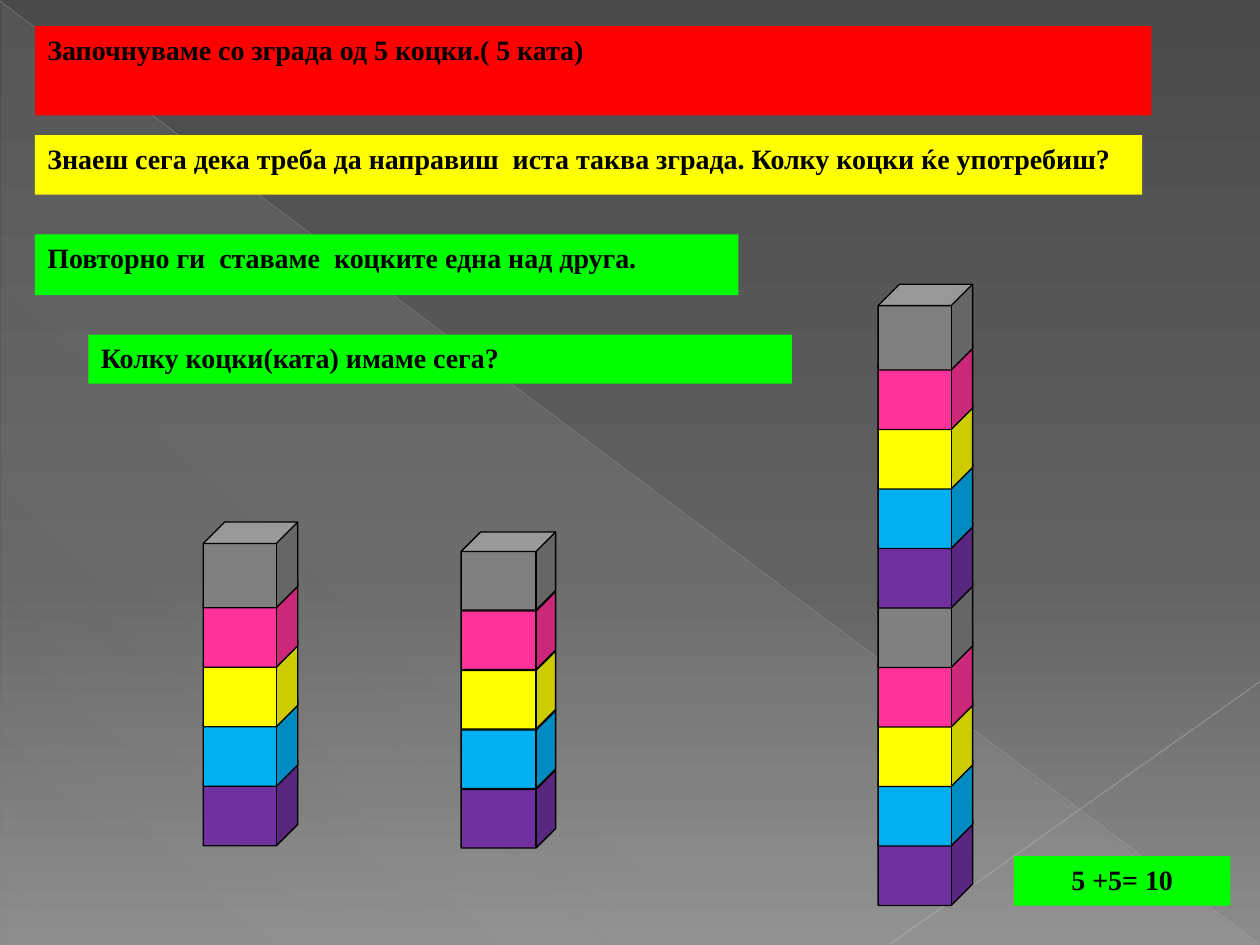
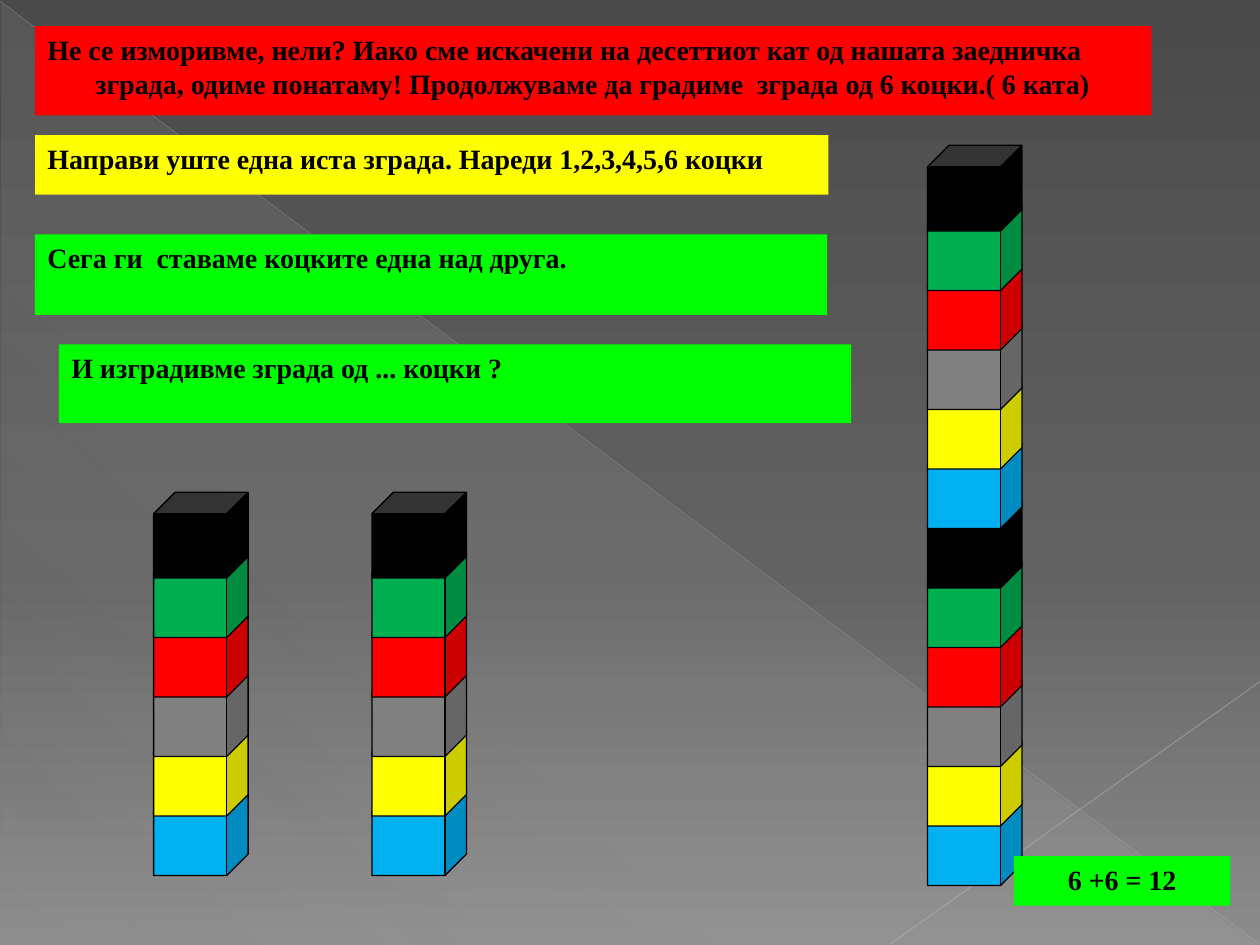
from lxml.etree import SubElement
from pptx import Presentation
from pptx.dml.color import RGBColor as RGB
from pptx.enum.shapes import MSO_CONNECTOR as CONN, MSO_SHAPE as SHAPE
from pptx.enum.text import MSO_ANCHOR as ANCHOR, PP_ALIGN as ALIGN
from pptx.oxml import parse_xml
from pptx.oxml.ns import nsdecls, qn
from pptx.util import Pt

W, H = 720, 540
FLOOR = 34
HANGING = 27.4
COLORS = {
    "black": "000000", "grey": "808080", "red": "FF0000", "green": "00B050",
    "lime": "00FF00", "yellow": "FFFF00", "blue": "00B0F0",
    "purple": "7030A0", "pink": "FF3399",
    "sky": "4A4A4A", "dusk": "626262", "ground": "8C8C8C",
    "haze": "D2D2D2", "long_ray": "BFBFBF", "short_ray": "C6C6C6",
}
FONT = {"name": "Times New Roman", "size": Pt(16), "bold": True}
FRAME = {"word_wrap": True, "vertical_anchor": ANCHOR.TOP}
BACKGROUND = [(0, "sky", 100), (60, "dusk", 100), (100, "ground", 100)]
HAZE = [(0, "haze", 10), (70, "haze", 8), (100, "haze", 1)]
FIVE = ["purple", "blue", "yellow", "pink", "grey"]
SIX = ["blue", "yellow", "grey", "red", "green", "black"]


def rgb(name):
    return RGB.from_string(COLORS[name])


def apply(target, values):
    for key, value in values.items():
        setattr(target, key, value)


def set_gradient(fill, element, stops, angle):
    fill.solid()
    old = element.xpath("./p:cSld/p:bg/p:bgPr/a:solidFill | ./p:spPr/a:solidFill")[0]
    gs = "".join(
        f'<a:gs pos="{pos * 1000}"><a:srgbClr val="{COLORS[color]}">'
        f'<a:alpha val="{alpha * 1000}"/></a:srgbClr></a:gs>'
        for pos, color, alpha in stops)
    new = parse_xml(
        f'<a:gradFill {nsdecls("a")} rotWithShape="1"><a:gsLst>{gs}</a:gsLst>'
        f'<a:lin ang="{angle * 60000}" scaled="0"/></a:gradFill>')
    old.getparent().replace(old, new)


def add_shape(s, kind, box, color):
    sp = s.shapes.add_shape(kind, *map(Pt, box))
    sp.shadow.inherit = False
    sp.fill.solid()
    sp.fill.fore_color.rgb = rgb(color)
    sp.line.fill.background()
    return sp


def add_ray(s, start, end, color, width, alpha):
    c = s.shapes.add_connector(CONN.STRAIGHT, *map(Pt, start + end))
    c.line.color.rgb = rgb(color)
    c.line.width = Pt(width)
    spPr = c._element.spPr
    clr = spPr.find(".//" + qn("a:srgbClr"))
    SubElement(clr, qn("a:alpha"), val=str(alpha * 1000))
    SubElement(spPr, qn("a:effectLst"))


def add_backdrop(s):
    set_gradient(s.background.fill, s.element, BACKGROUND, 90)
    sp = add_shape(s, SHAPE.RIGHT_TRIANGLE, (0.7, 1.3, 718.6, 538.7), "haze")
    set_gradient(sp.fill, sp._element, HAZE, 133)
    add_ray(s, (0, 0.7), (719.3, 539.3), "long_ray", 0.39, 35)
    add_ray(s, (W, 389.5), (509, 539.3), "short_ray", 0.47, 45)


def add_banner(s, text, box, color, align=ALIGN.LEFT):
    tf = add_shape(s, SHAPE.RECTANGLE, box, color).text_frame
    apply(tf, FRAME)
    p = tf.paragraphs[0]
    p.alignment = align
    pPr = p._p.get_or_add_pPr()
    pPr.set("marL", str(Pt(HANGING)))
    pPr.set("indent", str(-Pt(HANGING)))
    SubElement(SubElement(pPr, qn("a:spcBef")), qn("a:spcPct"), val="20000")
    r = p.add_run()
    r.text = text
    apply(r.font, FONT)
    r.font.color.rgb = rgb("black")


def add_tower(s, left, ground_top, colors, height=49):
    for floor, color in enumerate(colors):
        box = (left, ground_top - floor * FLOOR, 54, height)
        sp = add_shape(s, SHAPE.CUBE, box, color)
        sp.adjustments[0] = 0.25
        sp.line.color.rgb = rgb("black")
        sp.line.width = Pt(0.75)


def add_lesson(prs, banners, towers, answer):
    s = prs.slides.add_slide(prs.slide_layouts[6])
    add_backdrop(s)
    for banner in banners:
        add_banner(s, *banner)
    for tower in towers:
        add_tower(s, *tower)
    add_banner(s, answer, (579.4, 489.3, 123.7, 28.3), "lime", ALIGN.CENTER)


def main():
    prs = Presentation()
    prs.slide_width, prs.slide_height = Pt(W), Pt(H)
    add_lesson(
        prs,
        [("Започнуваме со зграда од 5 коцки.( 5 ката)",
          (20, 15, 638, 51), "red"),
         ("Знаеш сега дека треба да направиш  иста таква зграда. Колку коцки ќе употребиш?",
          (20, 77.2, 632.7, 34), "yellow"),
         ("Повторно ги  ставаме  коцките една над друга.",
          (20, 134, 402, 34.6), "lime"),
         ("Колку коцки(ката) имаме сега?",
          (50.6, 191.3, 402, 28), "lime")],
        [(116.2, 434.3, FIVE), (263.5, 440, FIVE, 44.6), (501.8, 468.4, FIVE * 2)],
        "5 +5= 10")
    add_lesson(
        prs,
        [("Не се изморивме, нели? Иако сме искачени на десеттиот кат од нашата заедничка "
          "зграда, одиме понатаму! Продолжуваме да градиме  зграда од 6 коцки.( 6 ката)",
          (20, 15, 638, 51), "red"),
         ("Направи уште една иста зграда. Нареди 1,2,3,4,5,6 коцки",
          (20, 77.2, 453.4, 34), "yellow"),
         ("Сега ги  ставаме коцките една над друга.",
          (20, 134, 452.7, 46), "lime"),
         ("И изградивме зграда од ... коцки ?",
          (33.7, 196.8, 452.7, 45), "lime")],
        [(87.8, 451.3, SIX), (212.5, 451.3, SIX), (530, 457, SIX * 2)],
        "6 +6 = 12")
    prs.save("out.pptx")


if __name__ == "__main__":
    main()
